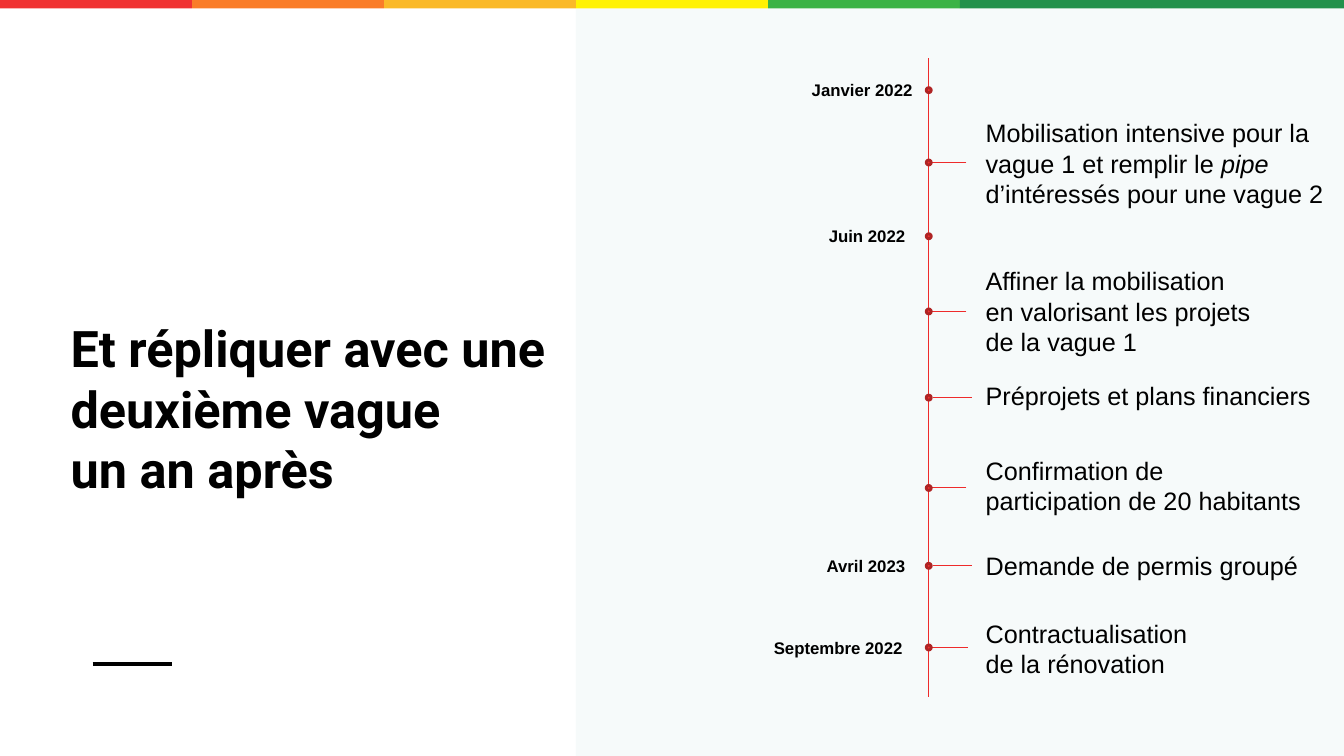
from dataclasses import dataclass

import pptx
import pptx.dml.color
import pptx.enum.shapes
import pptx.enum.text
import pptx.oxml
import pptx.oxml.ns
import pptx.util

SHAPES = pptx.enum.shapes.MSO_SHAPE
ALIGN = pptx.enum.text.PP_ALIGN
MIDDLE = pptx.enum.text.MSO_ANCHOR.MIDDLE

COLOURS = {
    "ink": "000000",
    "panel": "F6FAFA",
    "axis": "EE2B2B",
    "dot": "F03232",
    "dot_edge": "AF2424",
}
BAND = ["F03232", "FA7C28", "FAB928", "FFF203", "3BB345", "23914B", "23914B"]

# Positions are percentages of the slide's width (across) and height (down)
WIDTH, HEIGHT = pptx.util.Inches(13.33), pptx.util.Inches(7.5)
COLUMN = 100 / len(BAND)
BAND_HEIGHT = 1.1
AXIS = 69.1
NOTE_LEFT = 72.6
STALK = 2.9
LINE_HEIGHT, PADDING = 4.0, 1.4


@dataclass
class Date:
    text: str
    right: float
    width: float


@dataclass
class Note:
    text: str  # \v breaks the line, asterisks enclose italics
    middle: float
    width: float
    stalk_start: float = 69.0


@dataclass
class Stop:
    down: float
    date: Date | None = None
    note: Note | None = None


STOPS = [
    Stop(11.93, Date("Janvier 2022", 68.64, 9.3)),
    Stop(21.5, note=Note("Mobilisation intensive pour la \vvague 1 et remplir le *pipe *"
                         "\vd’intéressés pour une vague 2", 21.55, 26.9)),
    Stop(31.25, Date("Juin 2022", 68.1, 7.5)),
    Stop(41.2, note=Note("Affiner la mobilisation \ven valorisant les projets"
                         "\vde la vague 1", 41.15, 21.4)),
    Stop(52.6, note=Note("Préprojets et plans financiers", 52.3, 26, 69.4)),
    Stop(64.55, note=Note("Confirmation de\vparticipation de 20 habitants", 64.2, 25.2)),
    Stop(74.85, Date("Avril 2023", 68.1, 7.6),
         Note("Demande de permis groupé", 74.8, 25, 69.4)),
    Stop(85.65, Date("Septembre 2022", 67.9, 11.3),
         Note("Contractualisation \vde la rénovation", 85.8, 17.2, 69.1)),
]


def across(share: float) -> int:
    return round(WIDTH * share / 100)


def down(share: float) -> int:
    return round(HEIGHT * share / 100)


def colour(name: str) -> pptx.dml.color.RGBColor:
    return pptx.dml.color.RGBColor.from_string(COLOURS.get(name, name))


def add_block(slide, left: float, top: float, width: float, height: float, fill: str) -> None:
    block = slide.shapes.add_shape(SHAPES.RECTANGLE, across(left), down(top),
                                   across(width), down(height))
    block.shadow.inherit = False
    block.fill.solid()
    block.fill.fore_color.rgb = colour(fill)
    block.line.fill.background()


def add_rule(slide, x1: float, y1: float, x2: float, y2: float,
             stroke: str, weight: float) -> None:
    rule = slide.shapes.add_connector(pptx.enum.shapes.MSO_CONNECTOR.STRAIGHT,
                                      across(x1), down(y1), across(x2), down(y2))
    rule.line.color.rgb = colour(stroke)
    rule.line.width = pptx.util.Pt(weight)
    properties = rule._element.spPr
    properties.append(pptx.oxml.parse_xml(
        f'<a:effectLst {pptx.oxml.ns.nsdecls("a")}/>'))


def add_dot(slide, middle: float) -> None:
    size = pptx.util.Inches(0.05)
    dot = slide.shapes.add_shape(SHAPES.OVAL, across(AXIS) - size // 2,
                                 down(middle) - size // 2, size, size)
    dot.shadow.inherit = False
    dot.fill.solid()
    dot.fill.fore_color.rgb = colour("dot")
    dot.line.color.rgb = colour("dot_edge")
    dot.line.width = pptx.util.Pt(2)


def write(frame, text: str, size: int, font: str, bold: bool, align) -> None:
    frame.word_wrap = True
    frame.vertical_anchor = MIDDLE
    paragraph = frame.paragraphs[0]
    paragraph.alignment = align
    for row, line in enumerate(text.split("\v")):
        if row:
            paragraph.add_line_break()
        for order, part in enumerate(line.split("*")):
            if not part:
                continue
            run = paragraph.add_run()
            run.text = part
            run.font.size = pptx.util.Pt(size)
            run.font.name = font
            run.font.bold = bold
            run.font.italic = order % 2 == 1
            run.font.color.rgb = colour("ink")
    # Line breaks take the size of the text around them
    for line_break in paragraph._p.findall(pptx.oxml.ns.qn("a:br")):
        line_break.append(pptx.oxml.parse_xml(
            f'<a:rPr {pptx.oxml.ns.nsdecls("a")} sz="{size * 100}"/>'))


def add_label(slide, text: str, left: float, middle: float, width: float,
              height: float, size: int, bold: bool, align) -> None:
    label = slide.shapes.add_textbox(across(left), down(middle - height / 2),
                                     across(width), down(height))
    write(label.text_frame, text, size, "Arial", bold, align)


def add_stop(slide, stop: Stop) -> None:
    if stop.note:
        note = stop.note
        height = LINE_HEIGHT * (note.text.count("\v") + 1) + PADDING
        add_rule(slide, note.stalk_start + STALK, stop.down, note.stalk_start, stop.down,
                 "axis", 0.75)
        add_label(slide, note.text, NOTE_LEFT, note.middle, note.width, height,
                  18, False, ALIGN.LEFT)
    if stop.date:
        date = stop.date
        add_label(slide, date.text, date.right - date.width, stop.down, date.width,
                  LINE_HEIGHT, 12, True, ALIGN.RIGHT)
    add_dot(slide, stop.down)


def main() -> None:
    deck = pptx.Presentation()
    deck.slide_width, deck.slide_height = WIDTH, HEIGHT
    slide = deck.slides.add_slide(deck.slide_layouts[5])

    # Panel, rainbow band and accent rule
    add_block(slide, 3 * COLUMN, BAND_HEIGHT, 4 * COLUMN, 100 - BAND_HEIGHT, "panel")
    for order, shade in enumerate(BAND):
        add_block(slide, order * COLUMN, 0, COLUMN, BAND_HEIGHT, shade)
    add_rule(slide, 6.9, 87.87, 12.8, 87.87, "ink", 3)

    # Title
    title = slide.shapes.title
    title.left, title.top = across(4.5), down(30.4)
    title.width, title.height = across(38.86), down(47.2)
    write(title.text_frame, "Et répliquer avec une deuxième vague \vun an après",
          36, "Roboto", True, ALIGN.LEFT)

    # Timeline
    add_rule(slide, AXIS, 7.7, AXIS, 92.2, "axis", 0.75)
    for stop in STOPS:
        add_stop(slide, stop)

    deck.save("out.pptx")


if __name__ == "__main__":
    main()
